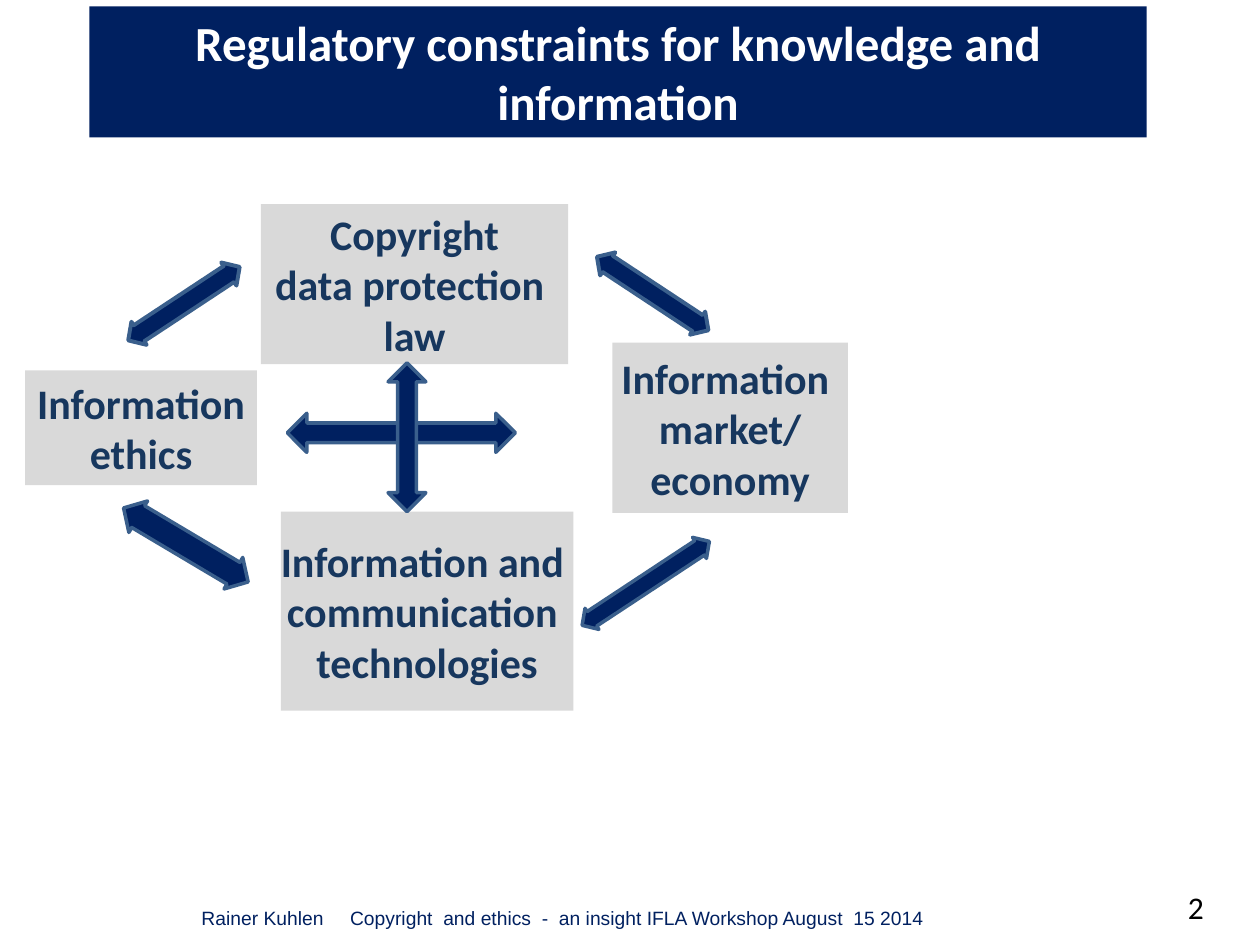
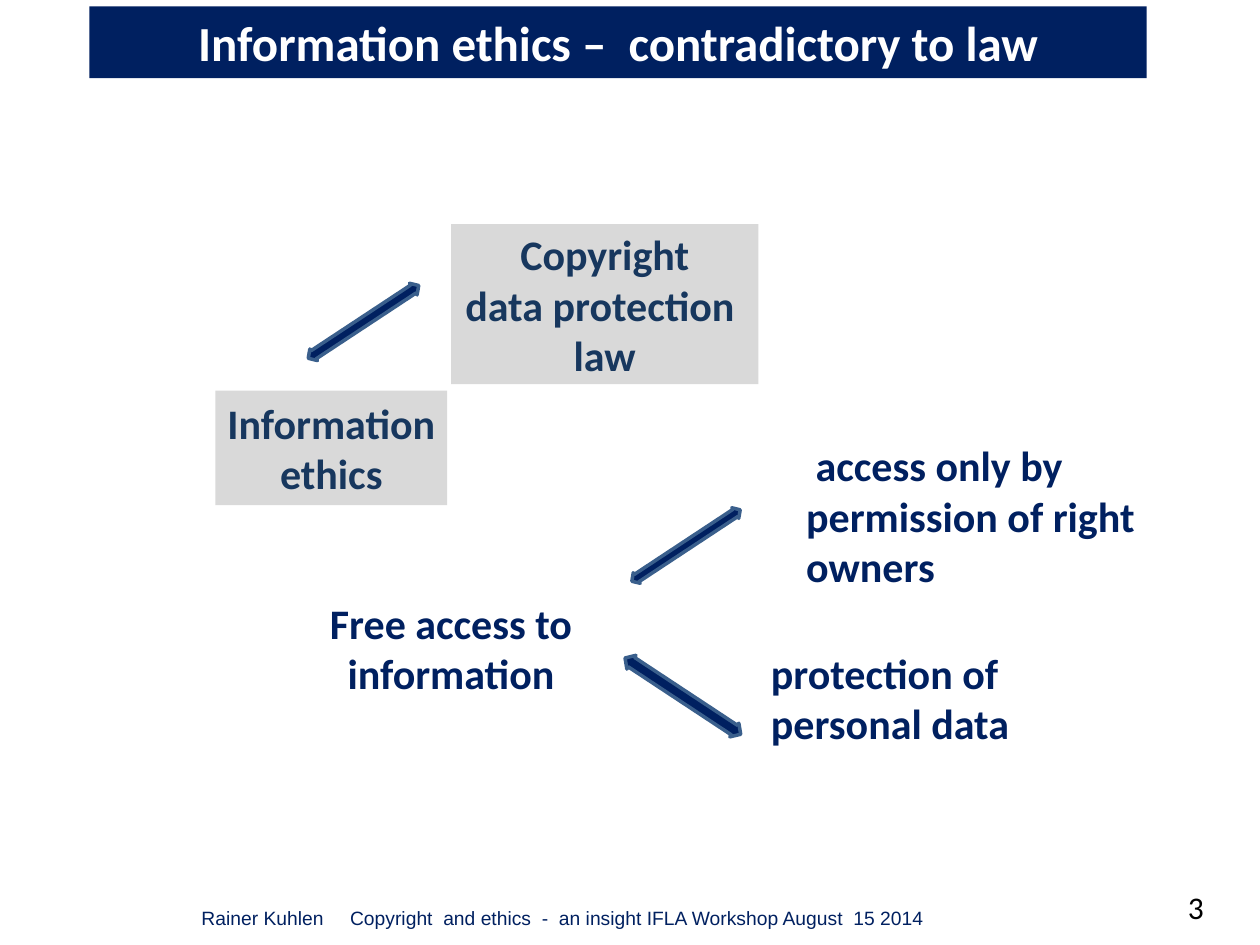
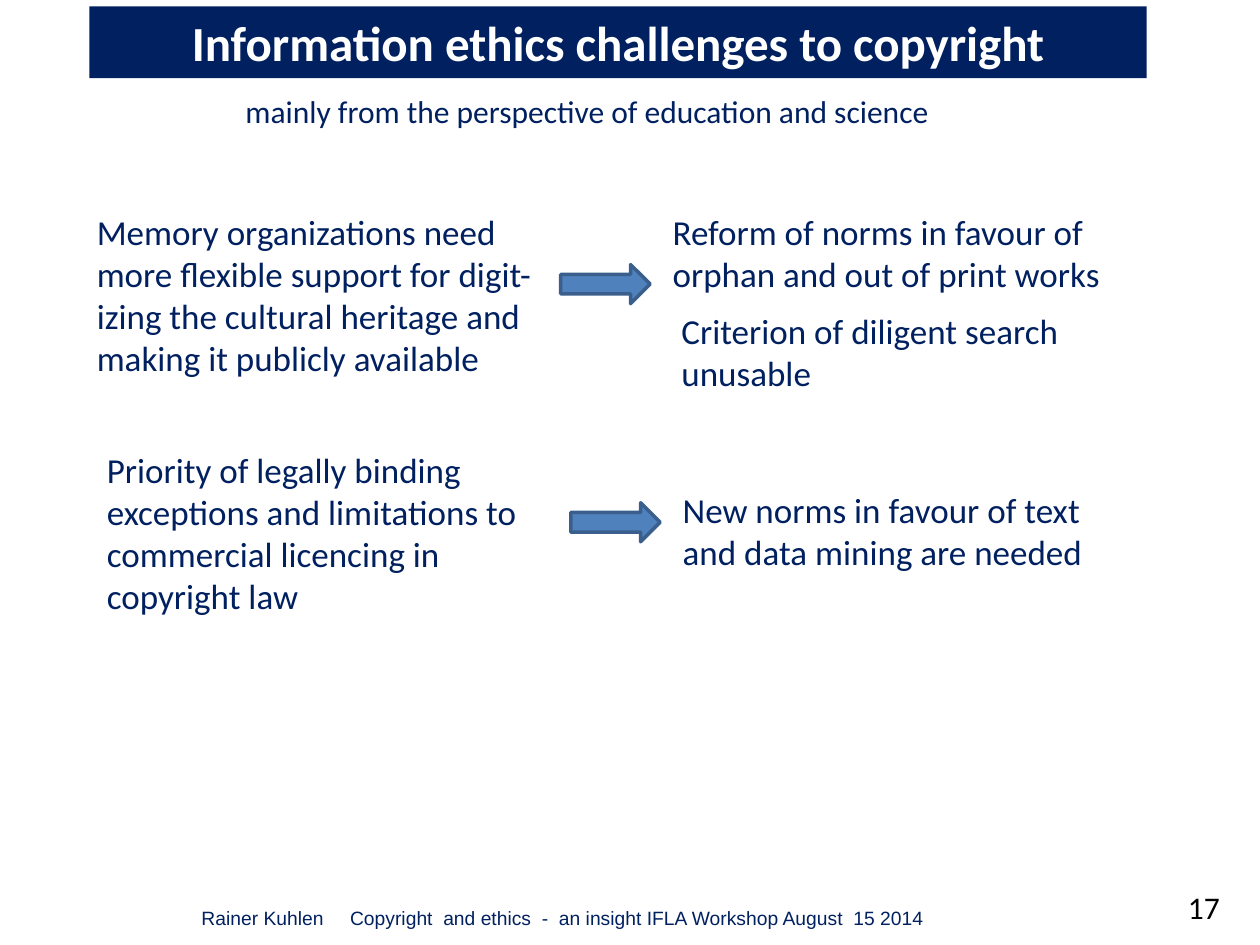
"""Build three slides on information ethics and copyright."""
from pptx import Presentation
from pptx.dml.color import RGBColor as Rgb
from pptx.enum.shapes import MSO_SHAPE as Kind
from pptx.enum.text import MSO_ANCHOR as Anchor, MSO_AUTO_SIZE as Fit, PP_ALIGN as Align
from pptx.oxml.ns import qn
from pptx.util import Inches, Pt
from lxml.etree import SubElement

HUES = {"navy": "002060", "ink": "17375E", "grey": "D9D9D9", "edge": "3A5F8C",
        "blue": "4F81BD", "white": "FFFFFF", "black": "000000"}
LAW = ["Copyright\ndata protection ", "law"]
ETHICS = ["Information", "ethics"]
TILT = 33.4
SLIM = (0.692, 0.468)


class Deck:
    """Hold the style and the current slide."""

    def __init__(self):
        self.show = Presentation()
        self.show.slide_width, self.show.slide_height = Inches(10), Inches(7.5)
        self.page = None

    def start(self, title, number, high=0.57):
        self.page = self.show.slides.add_slide(self.show.slide_layouts[6])
        self.text(9.33, 7, 0.58, 0.4, number, 18, "black")
        foot = self.text(1.5, 7.14, 7.42, 0.29,
                         "Rainer Kuhlen\tCopyright  and ethics  -  an insight "
                         "IFLA Workshop August  15 2014", 11, font="Arial")
        props = foot.text_frame.paragraphs[0]._p.get_or_add_pPr()
        stops = SubElement(props, qn("a:tabLst"))
        SubElement(stops, qn("a:tab"), pos=str(Inches(1.18)), algn="l")
        band = self.shape(Kind.RECTANGLE, 0.71, 0.05, 8.39, high, "navy")
        band.text_frame.word_wrap = True
        self.label(band, [title], 28, "white", True, Align.CENTER)

    def shape(self, kind, x, y, wide, high, fill, edge=None):
        item = self.page.shapes.add_shape(
            kind, Inches(x), Inches(y), Inches(wide), Inches(high))
        item.shadow.inherit = False
        item.fill.solid()
        item.fill.fore_color.rgb = Rgb.from_string(HUES[fill])
        if edge:
            item.line.color.rgb = Rgb.from_string(HUES["edge"])
            item.line.width = Pt(edge)
        else:
            item.line.fill.background()
        return item

    def label(self, item, lines, size, hue, bold, align, font="Calibri"):
        frame = item.text_frame
        for at, line in enumerate(lines):
            para = frame.add_paragraph() if at else frame.paragraphs[0]
            para.alignment = align
            for row, part in enumerate(line.split("\n")):
                if row:
                    para.add_line_break()
                run = para.add_run()
                run.text = part
                run.font.size, run.font.bold, run.font.name = Pt(size), bold, font
                run.font.color.rgb = Rgb.from_string(HUES[hue])

    def text(self, x, y, wide, high, words, size, hue="navy", bold=False,
             align=Align.LEFT, font="Calibri"):
        item = self.page.shapes.add_textbox(
            Inches(x), Inches(y), Inches(wide), Inches(high))
        item.text_frame.word_wrap = True
        item.text_frame.auto_size = Fit.SHAPE_TO_FIT_TEXT
        self.label(item, [words], size, hue, bold, align, font)
        return item

    def box(self, x, y, wide, high, lines):
        item = self.shape(Kind.RECTANGLE, x, y, wide, high, "grey")
        frame = item.text_frame
        frame.word_wrap = False
        frame.vertical_anchor = Anchor.MIDDLE
        frame.margin_left = frame.margin_right = 0
        frame.margin_top = frame.margin_bottom = 0
        self.label(item, lines, 24, "ink", True, Align.CENTER)

    def link(self, x, y, wide, high, turn=0, form=SLIM, edge=2):
        item = self.shape(Kind.LEFT_RIGHT_ARROW, x, y, wide, high, "navy", edge)
        item.rotation = turn % 360
        for at, value in enumerate(form):
            item.adjustments[at] = value


def forces(deck):
    """Show the four forces and the links between them."""
    deck.start("Regulatory constraints for knowledge and information", "2", 1.04)
    deck.box(2.07, 1.62, 2.44, 1.27, LAW)
    deck.box(2.23, 4.06, 2.32, 1.58,
             ["Information and ", "communication ", "technologies"])
    deck.box(0.2, 2.94, 1.84, 0.91, ETHICS)
    deck.box(4.86, 2.72, 1.87, 1.35, ["Information ", "market/\neconomy"])
    deck.link(2.28, 3.28, 1.81, 0.31, form=())
    deck.link(2.64, 3.32, 1.18, 0.3, 90, ())
    deck.link(0.93, 2.3, 1.06, 0.22, -TILT, edge=2.25)
    deck.link(4.65, 2.22, 1.06, 0.22, TILT, edge=2.25)
    deck.link(4.52, 4.53, 1.21, 0.2, -TILT)
    deck.link(0.9, 4.18, 1.15, 0.29, 30.7)


def clash(deck):
    """Set free access against law."""
    deck.start("Information ethics –  contradictory to law", "3")
    deck.box(3.58, 1.78, 2.44, 1.27, LAW)
    deck.box(1.71, 3.1, 1.84, 0.91, ETHICS)
    deck.link(2.36, 2.5, 1.05, 0.11, -TILT)
    deck.text(2.48, 4.69, 2.2, 0.91, "Free access to information", 24,
              bold=True, align=Align.CENTER)
    deck.text(6.3, 3.44, 3.7, 1.31, " access only by permission of right owners",
              24, bold=True)
    deck.link(4.93, 4.28, 1.03, 0.1, -TILT)
    deck.text(6.02, 5.09, 2.2, 0.91, "protection of personal data", 24, bold=True)
    deck.link(4.87, 5.46, 1.1, 0.13, TILT)


def needs(deck):
    """Pair each need with the reform it calls for."""
    deck.start("Information ethics challenges to copyright", "17")
    deck.text(1.85, 0.68, 6.3, 0.4,
              "mainly from the perspective of education and science", 18)
    pairs = [
        (0.67, 1.62, "Memory organizations need more flexible support for digit-izing "
         "the cultural heritage and making it publicly available",
         2.1, 1.62, "Reform of norms in favour of orphan and out of print works"),
        (0.75, 3.51, "Priority of legally binding exceptions and limitations to "
         "commercial licencing in copyright law",
         3.99, 3.83, "New norms in favour of text and data mining are needed"),
    ]
    for x, top, need, mid, side, norm in pairs:
        deck.text(x, top, 3.86, 1.45, need, 20)
        deck.shape(Kind.RIGHT_ARROW, x + 3.78, mid, 0.71, 0.31, "blue", 2)
        deck.text(x + 4.57, side, 3.7, 0.77, norm, 20)
    deck.text(5.31, 2.41, 3.7, 0.77, "Criterion of diligent search unusable", 20)


def main():
    """Build and save the deck."""
    deck = Deck()
    for build in (forces, clash, needs):
        build(deck)
    deck.show.save("out.pptx")


if __name__ == "__main__":
    main()
